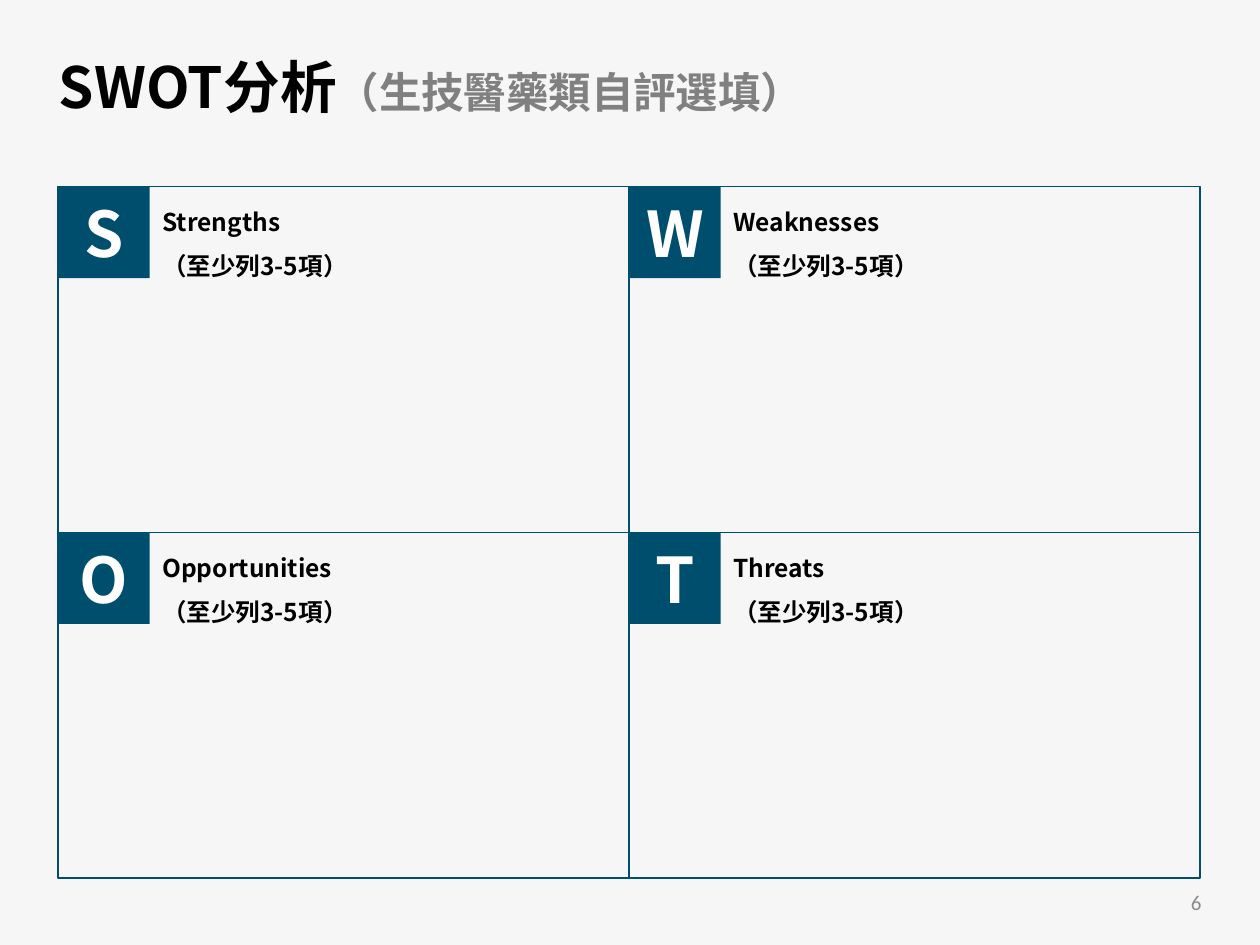
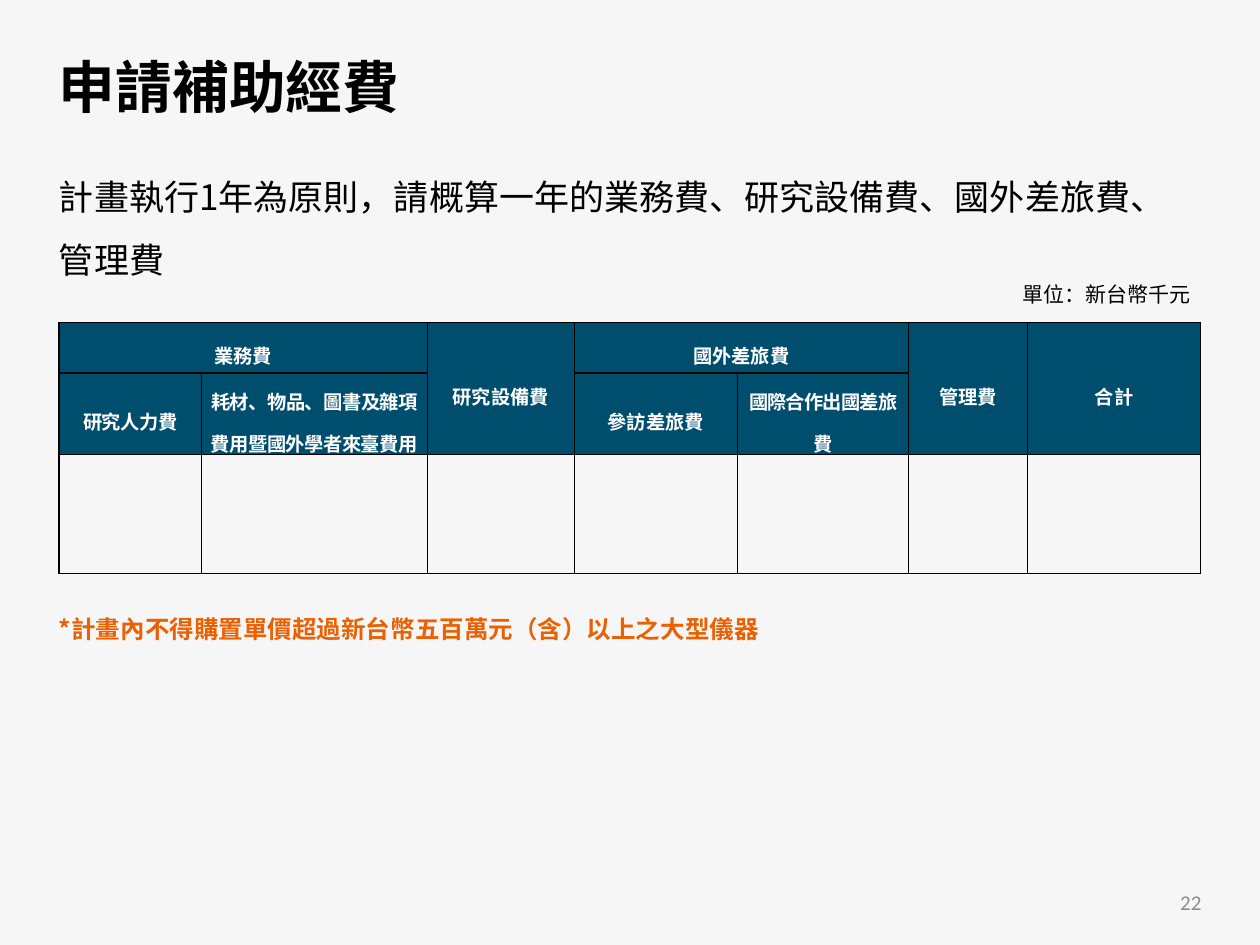
from lxml import etree
from pptx import Presentation
from pptx import util as u
from pptx.dml.color import RGBColor
from pptx.enum import shapes, text
from pptx.oxml.ns import qn

PAPER = RGBColor(0xF6, 0xF6, 0xF6)
TEAL = RGBColor(0x00, 0x4E, 0x6E)
BLACK = RGBColor(0, 0, 0)
WHITE = RGBColor(0xFF, 0xFF, 0xFF)
GREY = RGBColor(0x80, 0x80, 0x80)
PALE_GREY = RGBColor(0x8C, 0x8C, 0x8C)
ORANGE = RGBColor(0xEB, 0x60, 0x01)
CJK, LATIN = "Noto Sans CJK SC", "Calibri"
LEFT, WIDTH = 0.94, 23.5


def write(paragraph, words, size=14, color=BLACK, bold=False, font=CJK,
          align=text.PP_ALIGN.LEFT, leading=None, spacing=None):
    """Add one run to the paragraph; spacing is between letters, in points."""
    paragraph.alignment = align
    if leading:
        paragraph.line_spacing = leading
    run = paragraph.add_run()
    run.text = words
    run.font.size, run.font.bold, run.font.name = u.Pt(size), bold, font
    run.font.color.rgb = color
    properties = run.font._element
    etree.SubElement(properties, qn("a:ea")).set("typeface", font)
    if spacing:
        properties.set("spc", str(round(spacing * 100)))


def draw_borders(cell, color=BLACK, width=0.75):
    properties = cell._tc.get_or_add_tcPr()
    for place, side in enumerate(("lnL", "lnR", "lnT", "lnB")):
        line = etree.Element(qn(f"a:{side}"), w=str(u.Pt(width)))
        fill = etree.SubElement(line, qn("a:solidFill"))
        etree.SubElement(fill, qn("a:srgbClr")).set("val", str(color))
        properties.insert(place, line)


class Deck:
    """The shared style and the slide being filled; lengths are centimetres."""

    def __init__(self):
        self.file = Presentation()
        self.file.slide_width, self.file.slide_height = u.Cm(25.4), u.Cm(19.05)
        self.slide = None

    def start_slide(self, title, number, remark=None):
        self.slide = self.file.slides.add_slide(self.file.slide_layouts[6])
        self.slide.background.fill.solid()
        self.slide.background.fill.fore_color.rgb = PAPER
        middle = text.MSO_ANCHOR.MIDDLE
        heading = self.text_box(LEFT, 0.56, WIDTH, 2.06, title, anchor=middle,
                                size=32.4, bold=True, leading=1.2)
        if remark:
            write(heading.paragraphs[0], remark, size=24.3, color=GREY,
                  bold=True, leading=1.2)
        self.text_box(18.75, 17.68, 5.72, 1.02, number, anchor=middle, size=12,
                      color=PALE_GREY, font=LATIN, align=text.PP_ALIGN.RIGHT)

    def text_box(self, left, top, width, height, *lines,
                 anchor=text.MSO_ANCHOR.TOP, **style):
        box = self.slide.shapes.add_textbox(*map(u.Cm, (left, top, width, height)))
        frame = box.text_frame
        frame.word_wrap = True
        frame.vertical_anchor = anchor
        for index, line in enumerate(lines):
            write(frame.add_paragraph() if index else frame.paragraphs[0], line, **style)
        return frame

    def rectangle(self, left, top, width, height, fill=None, line=None):
        box = self.slide.shapes.add_shape(shapes.MSO_SHAPE.RECTANGLE,
                                          *map(u.Cm, (left, top, width, height)))
        box.shadow.inherit = False
        if fill is None:
            box.fill.background()
        else:
            box.fill.solid()
            box.fill.fore_color.rgb = fill
        if line is None:
            box.line.fill.background()
        else:
            box.line.color.rgb, box.line.width = line, u.Pt(0.75)
        return box

    def quadrant(self, left, top, width, height, name, hint, badge_size=1.85):
        self.rectangle(left, top, width, height, line=TEAL)
        badge = self.rectangle(left, top, badge_size, badge_size, fill=TEAL)
        badge.text_frame.vertical_anchor = text.MSO_ANCHOR.MIDDLE
        write(badge.text_frame.paragraphs[0], name[0], size=36, color=WHITE,
              bold=True, align=text.PP_ALIGN.CENTER)
        self.text_box(left + badge_size, top, 8.84, 2.08, name, hint,
                      bold=True, leading=1.5)

    def table(self, left, top, columns, rows, headings):
        """headings: (row, column, row span, column span, words, letter spacing)."""
        frame = self.slide.shapes.add_table(
            len(rows), len(columns),
            *map(u.Cm, (left, top, sum(columns), sum(rows))))
        grid = frame.table
        for column, width in zip(grid.columns, columns):
            column.width = u.Cm(width)
        for row, height in zip(grid.rows, rows):
            row.height = u.Cm(height)
        for cell in grid.iter_cells():
            cell.fill.background()
            draw_borders(cell)
        for row, column, down, across, words, spacing in headings:
            cell = grid.cell(row, column)
            if down * across > 1:
                cell.merge(grid.cell(row + down - 1, column + across - 1))
            cell.fill.solid()
            cell.fill.fore_color.rgb = TEAL
            cell.vertical_anchor = text.MSO_ANCHOR.MIDDLE
            cell.margin_left = cell.margin_right = u.Cm(0.05)
            cell.margin_top = cell.margin_bottom = 0
            write(cell.text_frame.paragraphs[0], words, size=11, color=WHITE,
                  bold=True, align=text.PP_ALIGN.CENTER, leading=1.5, spacing=spacing)


def add_swot(deck):
    deck.start_slide("SWOT分析", "6", remark="（生技醫藥類自評選填）")
    width, height = 11.51, 6.97
    for index, name in enumerate(("Strengths", "Weaknesses", "Opportunities", "Threats")):
        row, column = divmod(index, 2)
        deck.quadrant(1.17 + column * width, 3.76 + row * height, width, height,
                      name, "（至少列3-5項）")


def add_budget(deck):
    deck.start_slide("申請補助經費", "22")
    deck.table(
        1.19, 6.5, (2.87, 4.55, 2.97, 3.28, 3.45, 2.41, 3.48), (1.02, 1.65, 2.39),
        ((0, 0, 1, 2, "業務費", 0),
         (0, 2, 2, 1, "研究設備費", 0),
         (0, 3, 1, 2, "國外差旅費", 0),
         (0, 5, 2, 1, "管理費", 0),
         (0, 6, 2, 1, "合計", 0),
         (1, 0, 1, 1, "研究人力費", -0.3),
         (1, 1, 1, 1, "耗材、物品、圖書及雜項費用暨國外學者來臺費用", -0.3),
         (1, 3, 1, 1, "參訪差旅費", 0),
         (1, 4, 1, 1, "國際合作出國差旅費", -0.5)))
    deck.text_box(20.37, 5.56, 4.09, 0.76, "單位：新台幣千元", size=12)
    deck.text_box(LEFT, 3, WIDTH, 2.67,
                  "計畫執行1年為原則，請概算一年的業務費、研究設備費、國外差旅費、管理費",
                  size=20, leading=1.5)
    deck.text_box(LEFT, 11.96, WIDTH, 1.04,
                  "*計畫內不得購置單價超過新台幣五百萬元（含）以上之大型儀器",
                  color=ORANGE, bold=True, leading=1.5)


def main():
    deck = Deck()
    add_swot(deck)
    add_budget(deck)
    deck.file.save("out.pptx")


if __name__ == "__main__":
    main()
